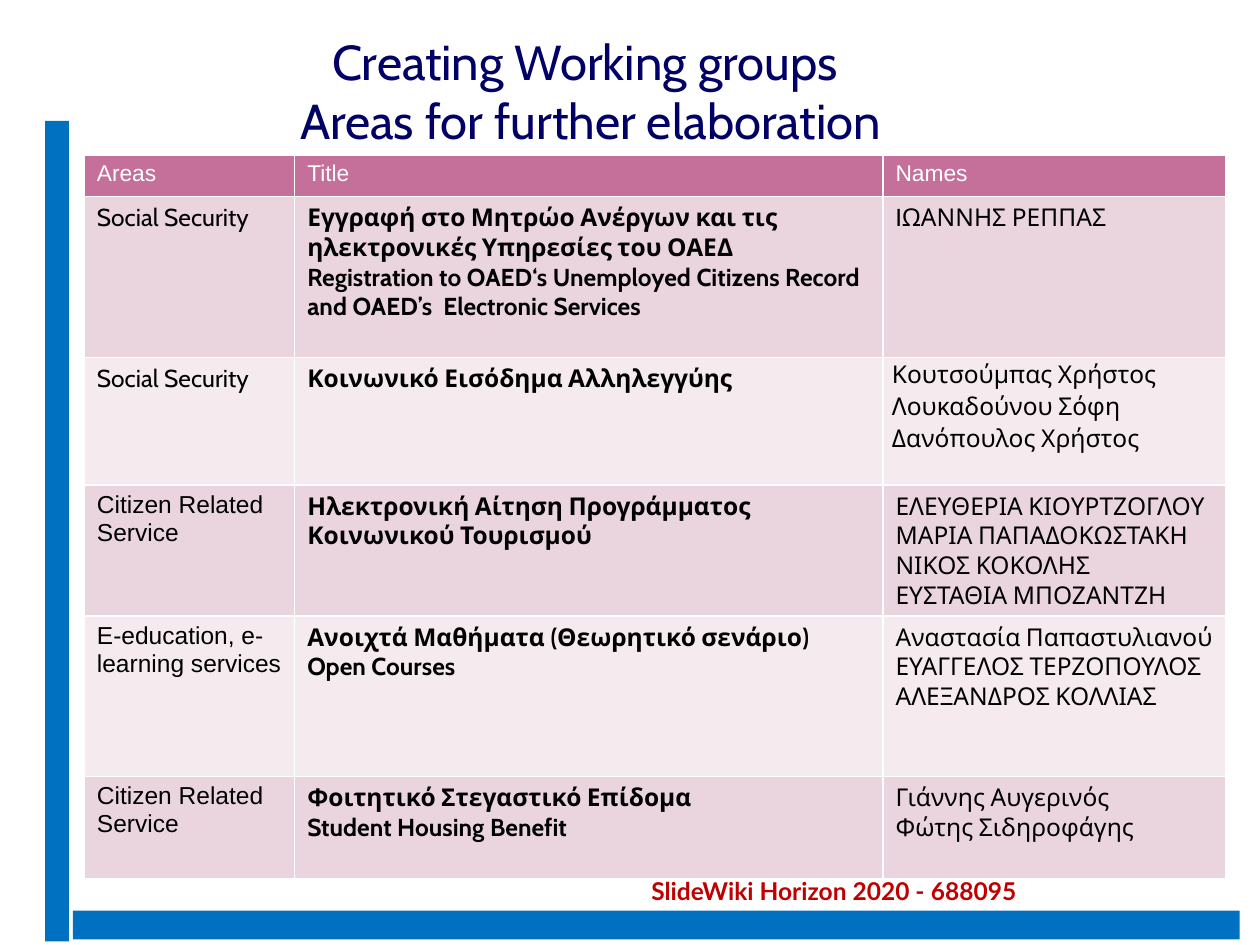
from collections import namedtuple

from lxml.etree import SubElement
from pptx import Presentation
from pptx.dml.color import RGBColor
from pptx.enum.shapes import MSO_SHAPE
from pptx.enum.text import MSO_ANCHOR, PP_ALIGN
from pptx.oxml import parse_xml
from pptx.oxml.ns import nsdecls, qn
from pptx.util import Cm, Pt

Box = namedtuple("Box", "left top width height")

COLORS = {
    "bar": "0070C0",
    "footer": "C00000",
    "title": "000066",
    "header": "C4709A",
    "odd": "EAD5DE",
    "even": "F5EBEF",
    "white": "FFFFFF",
    "black": "000000",
}
COLUMN_WIDTHS = [4.24, 11.86, 6.91]
ROW_HEIGHTS = [0.84, 3.25, 2.57, 2.64, 3.23, 2.06]
HEADINGS = ["Areas", "Title", "Names"]
GROUPS = [
    ("Social Security",
     "Εγγραφή στο Μητρώο Ανέργων και τις ηλεκτρονικές Υπηρεσίες του ΟΑΕΔ\n"
     "Registration to OAED‘s Unemployed Citizens Record and OAED’s  Electronic Services",
     "IΩΑΝΝΗΣ ΡΕΠΠΑΣ"),
    ("Social Security",
     "Κοινωνικό Εισόδημα Αλληλεγγύης",
     "Κουτσούμπας Χρήστος\nΛουκαδούνου Σόφη\nΔανόπουλος Χρήστος"),
    ("Citizen Related Service",
     "Ηλεκτρονική Αίτηση Προγράμματος Κοινωνικού Τουρισμού",
     "ΕΛΕΥΘΕΡΙΑ ΚΙΟΥΡΤΖΟΓΛΟΥ\nΜΑΡΙΑ ΠΑΠΑΔΟΚΩΣΤΑΚΗ\nΝΙΚΟΣ ΚΟΚΟΛΗΣ\nΕΥΣΤΑΘΙΑ ΜΠΟΖΑΝΤΖΗ"),
    ("E-education, e-learning services",
     "Ανοιχτά Μαθήματα (Θεωρητικό σενάριο)\nOpen Courses",
     "Αναστασία Παπαστυλιανού\nΕΥΑΓΓΕΛΟΣ ΤΕΡΖΟΠΟΥΛΟΣ\nΑΛΕΞΑΝΔΡΟΣ ΚΟΛΛΙΑΣ"),
    ("Citizen Related Service",
     "Φοιτητικό Στεγαστικό Επίδομα\nStudent Housing Benefit",
     "Γιάννης Αυγερινός\nΦώτης Σιδηροφάγης"),
]


def rgb(name):
    """Return the named colour."""
    return RGBColor.from_string(COLORS[name])


def style_text(frame, font_name, size, color, bold=False):
    """Format every run of a text frame alike."""
    for para in frame.paragraphs:
        for span in para.runs:
            span.font.name = font_name
            span.font.size = Pt(size)
            span.font.bold = bold
            span.font.color.rgb = rgb(color)


def add_bar(page, box):
    """Add a plain blue bar filling the box."""
    bar = page.shapes.add_shape(MSO_SHAPE.RECTANGLE, *map(Cm, box))
    bar.shadow.inherit = False
    bar.fill.solid()
    bar.fill.fore_color.rgb = rgb("bar")
    bar.line.fill.background()


def add_frame(page, box):
    """Add the bars at the left and bottom edges and the project line above."""
    thickness = 0.58
    bottom = box.top + box.height
    add_bar(page, Box(box.left, box.top, 0.48, box.height))
    add_bar(page, Box(box.left + 0.56, bottom - thickness - 0.04,
                      box.width - 0.56, thickness))
    label = page.shapes.add_textbox(Cm(box.left + 11.97), Cm(bottom - 1.45),
                                    Cm(10.67), Cm(0.86))
    label.text_frame.word_wrap = True
    label.text_frame.text = "SlideWiki Horizon 2020 -\u00a0688095"
    style_text(label.text_frame, "Lato", 14, "footer", bold=True)


def fill_title(page, box):
    """Move the title placeholder into the box and fill it."""
    title = page.shapes.title
    title.left, title.top, title.width, title.height = map(Cm, box)
    frame = title.text_frame
    frame.text = "Creating Working groups \vAreas for further elaboration"
    frame.vertical_anchor = MSO_ANCHOR.BOTTOM
    frame.paragraphs[0].alignment = PP_ALIGN.CENTER
    style_text(frame, "Cabin", 28, "title")


def paint_cell(cell, color):
    """Fill a cell and give it thin white borders."""
    cell.fill.solid()
    cell.fill.fore_color.rgb = rgb(color)
    properties = cell._tc.get_or_add_tcPr()
    for index, side in enumerate("LRTB"):
        border = parse_xml(f'<a:ln{side} {nsdecls("a")} w="{Pt(1)}"/>')
        fill = SubElement(border, qn("a:solidFill"))
        SubElement(fill, qn("a:srgbClr"), val=COLORS["white"])
        properties.insert(index, border)


def add_groups_table(page, box):
    """Add the table of areas, titles and names."""
    table = page.shapes.add_table(len(ROW_HEIGHTS), len(COLUMN_WIDTHS),
                                  *map(Cm, box)).table
    for column, width in zip(table.columns, COLUMN_WIDTHS):
        column.width = Cm(width)
    for row, height in zip(table.rows, ROW_HEIGHTS):
        row.height = Cm(height)

    for row_index, texts in enumerate([HEADINGS, *GROUPS]):
        for column_index, text in enumerate(texts):
            cell = table.cell(row_index, column_index)
            cell.text_frame.text = text
            if row_index == 0:
                paint_cell(cell, "header")
                style_text(cell.text_frame, "Arial", 13, "white")
                continue
            paint_cell(cell, "odd" if row_index % 2 else "even")
            plain_area = column_index == 0 and row_index > 2
            style_text(cell.text_frame, "Arial" if plain_area else "Cabin",
                       14, "black", bold=column_index == 1)

    tight_cell = table.cell(2, 2)
    tight_cell.margin_left = tight_cell.margin_right = Cm(0.18)
    tight_cell.margin_top = tight_cell.margin_bottom = 0
    for para in tight_cell.text_frame.paragraphs:
        para.line_spacing = 1.07


def main():
    """Build the slide and save it."""
    deck = Presentation()
    deck.slide_width, deck.slide_height = Cm(25.4), Cm(19.05)
    page = deck.slides.add_slide(deck.slide_layouts[5])
    add_frame(page, Box(0.91, 2.44, 24.08, 16.54))
    fill_title(page, Box(2.49, 1.12, 18.82, 2.01))
    add_groups_table(page, Box(1.7, 3.12, sum(COLUMN_WIDTHS), sum(ROW_HEIGHTS)))
    deck.save("out.pptx")


if __name__ == "__main__":
    main()
